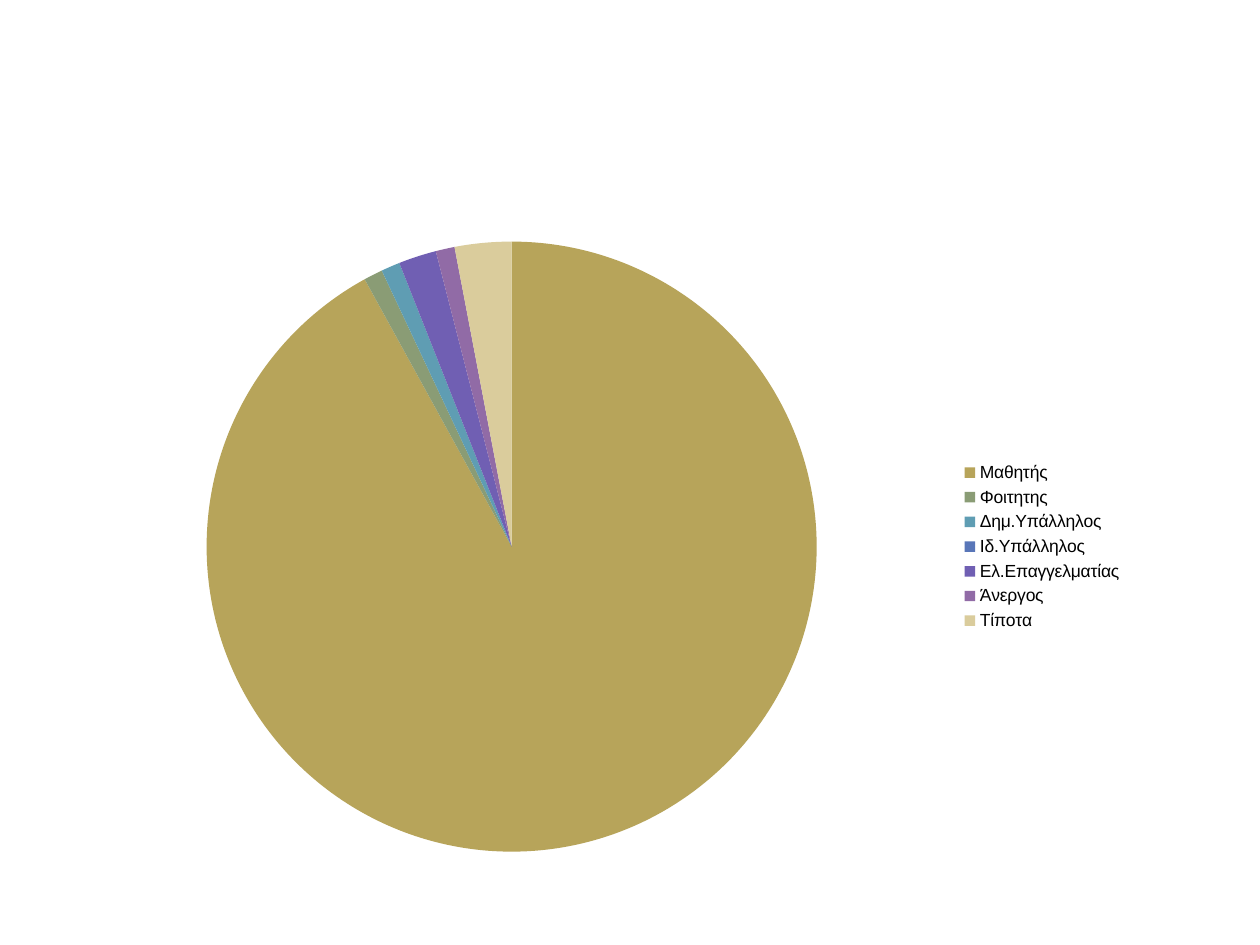
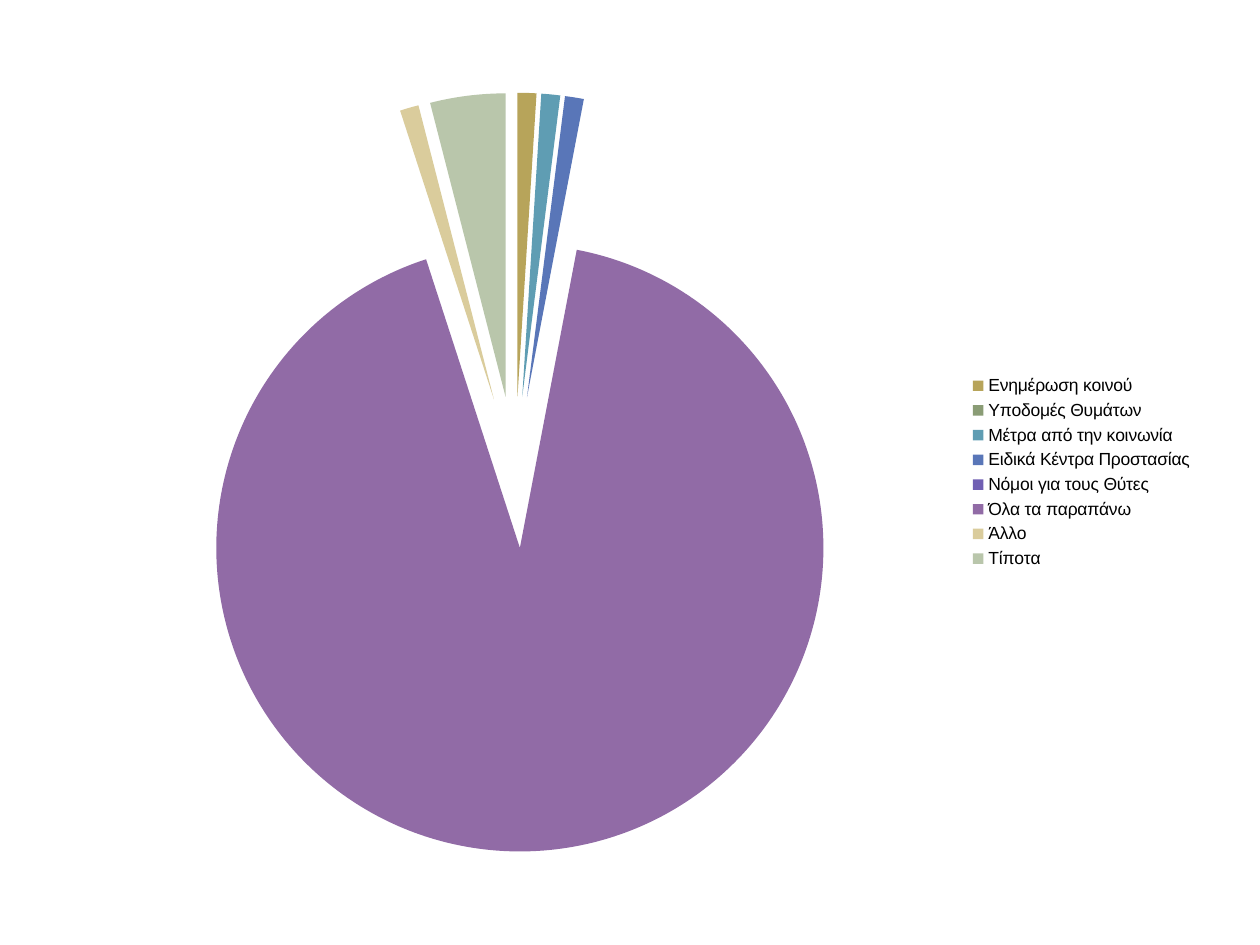
from lxml import etree
from pptx import Presentation
from pptx.chart.data import CategoryChartData
from pptx.dml.color import RGBColor
from pptx.enum import chart as chart_enum
from pptx.oxml import ns
from pptx.util import Cm, Pt

FONT = "Arial"
COLOURS = {
    "text": "000000",
    "gold": "B7A45A",
    "sage": "8A9C75",
    "teal": "5F9DB3",
    "blue": "5976B8",
    "violet": "705FB3",
    "mauve": "916BA6",
    "sand": "DACC9C",
    "mint": "B9C6AB",
}
SLICE_COLOURS = ["gold", "sage", "teal", "blue", "violet", "mauve", "sand", "mint"]

OCCUPATIONS = {
    "Μαθητής": 92,
    "Φοιτητης": 1,
    "Δημ.Υπάλληλος": 1,
    "Ιδ.Υπάλληλος": 0,
    "Ελ.Επαγγελματίας": 2,
    "Άνεργος": 1,
    "Τίποτα": 3,
}
MEASURES = {
    "Ενημέρωση κοινού": 1,
    "Υποδομές Θυμάτων": 0,
    "Μέτρα από την κοινωνία": 1,
    "Ειδικά Κέντρα Προστασίας": 1,
    "Νόμοι για τους Θύτες": 0,
    "Όλα τα παραπάνω": 92,
    "Άλλο": 1,
    "Τίποτα": 4,
}


def colour(name):
    return RGBColor.from_string(COLOURS[name])


def explode_slices(series, percent):
    """Move every slice out from the centre by a share of the radius."""
    explosion = etree.Element(ns.qn("c:explosion"), val=str(percent))
    series._element.find(ns.qn("c:dPt")).addprevious(explosion)


def add_pie_slide(presentation, answers, box, explosion=0):
    slide = presentation.slides.add_slide(presentation.slide_layouts[6])

    # Pie with its values
    data = CategoryChartData()
    data.categories = list(answers)
    data.add_series("Series 1", list(answers.values()))
    lengths = [Cm(length) for length in box]
    chart = slide.shapes.add_chart(chart_enum.XL_CHART_TYPE.PIE, *lengths, data).chart
    chart.has_title = False
    chart.font.name = FONT
    chart.font.size = Pt(10)
    chart.font.color.rgb = colour("text")

    # Legend
    chart.has_legend = True
    chart.legend.position = chart_enum.XL_LEGEND_POSITION.RIGHT
    chart.legend.include_in_layout = False

    # Slices
    plot = chart.plots[0]
    plot.vary_by_categories = True
    series = plot.series[0]
    for index, name in enumerate(SLICE_COLOURS[:len(answers)]):
        slice_format = series.points[index].format
        slice_format.fill.solid()
        slice_format.fill.fore_color.rgb = colour(name)
        slice_format.line.fill.background()
    if explosion:
        explode_slices(series, explosion)


def main():
    presentation = Presentation()
    presentation.slide_width = Cm(25.4)
    presentation.slide_height = Cm(19.05)
    add_pie_slide(presentation, OCCUPATIONS, (1.3, 4.52, 21.59, 13))
    add_pie_slide(presentation, MEASURES, (1.27, 1.52, 23.04, 16), explosion=25)
    presentation.save("out.pptx")


if __name__ == "__main__":
    main()
